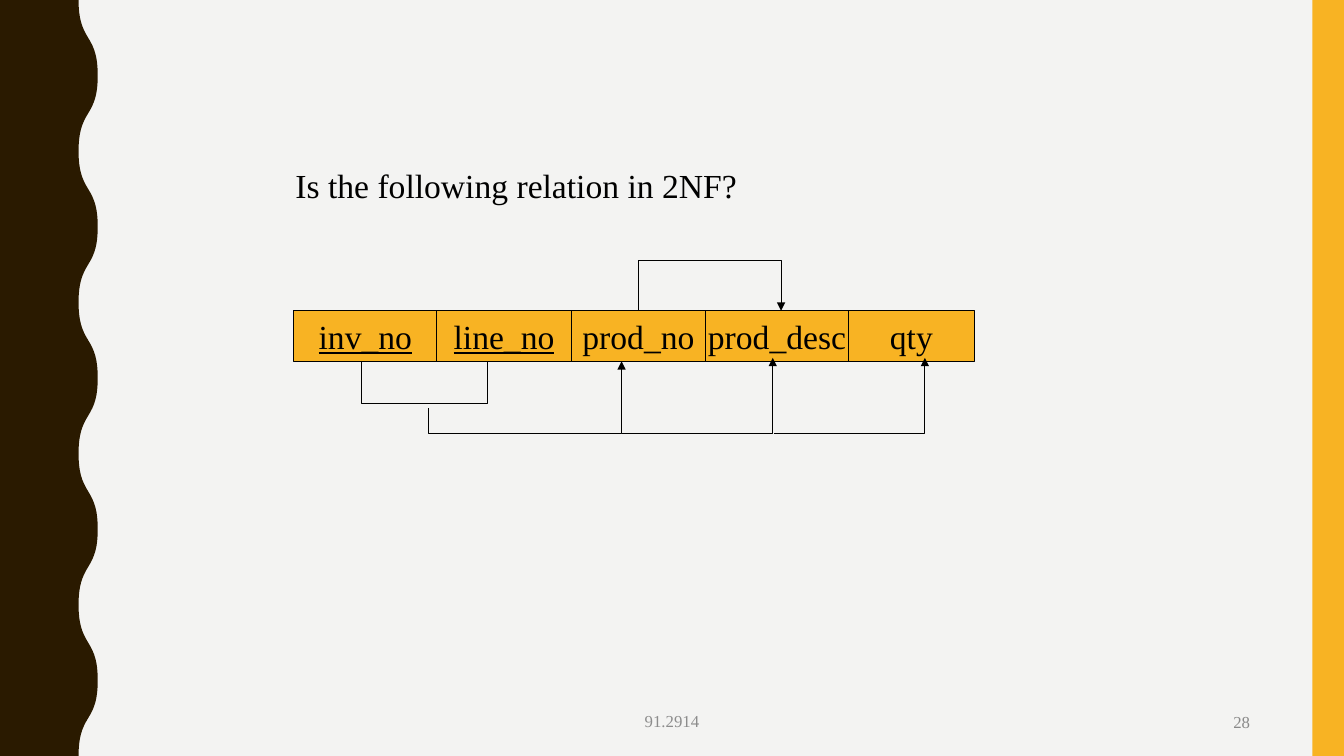
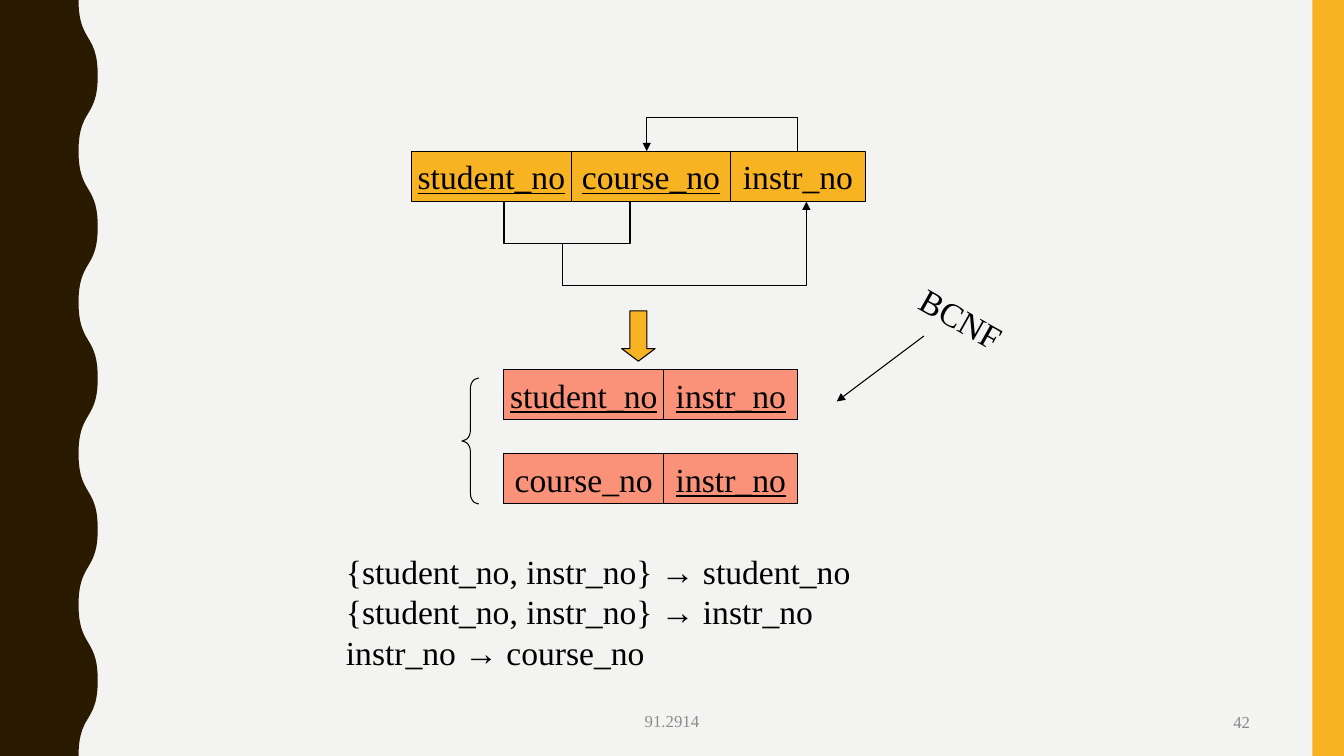
"""Two slides on normal forms: a 2NF question and a BCNF decomposition."""
from lxml.etree import SubElement
from pptx import Presentation
from pptx.dml.color import RGBColor
from pptx.enum.shapes import MSO_CONNECTOR, MSO_SHAPE as Preset
from pptx.enum.text import MSO_ANCHOR as Anchor, MSO_AUTO_SIZE as AutoSize, PP_ALIGN as Align
from pptx.oxml.ns import qn
from pptx.util import Inches, Pt

FONT = "Times New Roman"
PAPER, BROWN, AMBER, RED, BLACK = "F3F3F2", "2A1A00", "F8B323", "FF3300", "000000"
UNIT = Inches(1) // 12
COLUMNS, ROWS = 160, 90
CELL_ROWS = 6


def paint(shape, fill=None, line=BLACK, opacity=100, arrow=False):
    """Set fill, outline and arrowhead, and remove the shadow."""
    properties = shape._element.spPr
    if fill:
        shape.fill.solid()
        shape.fill.fore_color.rgb = RGBColor.from_string(fill)
        if opacity < 100:
            color = properties.find(qn("a:solidFill"))[0]
            SubElement(color, qn("a:alpha"), val=str(opacity * 1000))
    elif hasattr(shape, "fill"):
        shape.fill.background()
    if line:
        shape.line.color.rgb = RGBColor.from_string(line)
        shape.line.width = Pt(0.75)
    else:
        shape.line.fill.background()
    if arrow:
        SubElement(properties.find(qn("a:ln")), qn("a:tailEnd"), type="triangle")
    SubElement(properties, qn("a:effectLst"))


def write(shape, text, size=24, color=BLACK, align=Align.LEFT, anchor=Anchor.TOP, wrap=False, underline=None):
    """Fill a shape with text in the shared font."""
    frame = shape.text_frame
    frame.text = text
    frame.word_wrap = wrap
    frame.vertical_anchor = anchor
    for paragraph in frame.paragraphs:
        paragraph.alignment = align
        for run in paragraph.runs:
            run.font.name = FONT
            run.font.size = Pt(size)
            run.font.underline = underline
            run.font.color.rgb = RGBColor.from_string(color)


presentation = Presentation()
presentation.slide_width = COLUMNS * UNIT
presentation.slide_height = ROWS * UNIT
background = presentation.slide_master.background.fill
background.solid()
background.fore_color.rgb = RGBColor.from_string(PAPER)

WAVE_LENGTH = 1.5
STEPS = 8
controls = [(0.78, 0), (0.78, 0.18), (0.81, 0.27), (0.875, 0.375)]
quarter = []
for step in range(STEPS + 1):
    t = step / STEPS
    weights = [(1 - t) ** 3, 3 * t * (1 - t) ** 2, 3 * t ** 2 * (1 - t), t ** 3]
    quarter.append([sum(w * point[axis] for w, point in zip(weights, controls)) for axis in (0, 1)])
middle_x, middle_y = controls[-1]
rising = quarter + [(2 * middle_x - x, 2 * middle_y - y) for x, y in reversed(quarter[:-1])]
wave = rising + [(x, WAVE_LENGTH - y) for x, y in reversed(rising[:-1])]
edge = [(Inches(x), Inches(y + crest * WAVE_LENGTH)) for crest in range(5) for x, y in wave]

footers = [
    ("91.2914", 61, 83.4, 38, 4.8, "8C8C8C", Align.CENTER),
    (None, 113, 83.6, 37, 4.6, "898989", Align.RIGHT),
]
slides = []
for number in ("28", "42"):
    slide = presentation.slides.add_slide(presentation.slide_layouts[6])
    slides.append(slide)
    builder = slide.shapes.build_freeform(0, 0)
    builder.add_line_segments(edge + [(0, ROWS * UNIT)], close=True)
    paint(builder.convert_to_shape(), BROWN, None)
    band = slide.shapes.add_shape(
        Preset.RECTANGLE, int(156.25 * UNIT), 0, int(3.75 * UNIT), ROWS * UNIT)
    paint(band, AMBER, None)
    for text, left, top, width, height, color, align in footers:
        footer = slide.shapes.add_textbox(*[int(n * UNIT) for n in (left, top, width, height)])
        write(footer, text or number, 12, color, align, Anchor.MIDDLE, wrap=True)
question, decomposition = slides

relations = [
    (question, 35, 37, AMBER, 100, [("inv_no", 17, True), ("line_no", 16, True), ("prod_no", 16, False),
                                    ("prod_desc", 17, False), ("qty", 15, False)]),
    (decomposition, 60, 54, RED, 50, [("course_no", 19, False), ("instr_no", 16, True)]),
    (decomposition, 60, 44, RED, 50, [("student_no", 19, True), ("instr_no", 16, True)]),
    (decomposition, 49, 18, AMBER, 100, [("student_no", 19, True), ("course_no", 19, True),
                                         ("instr_no", 16, False)]),
]
for slide, left, top, fill, opacity, attributes in relations:
    for name, width, is_key in attributes:
        cell = slide.shapes.add_shape(
            Preset.RECTANGLE, left * UNIT, top * UNIT, width * UNIT, CELL_ROWS * UNIT)
        paint(cell, fill, opacity=opacity)
        write(cell, name, align=Align.CENTER, anchor=Anchor.MIDDLE, underline=is_key)
        left += width

dependencies = [
    (question, False, [(43, 43), (43, 48), (58, 48), (58, 43)]),
    (question, True, [(51, 48.6), (51, 51.6), (74, 51.6), (74, 43)]),
    (question, True, [(74, 51.6), (92, 51.6), (92, 42.6)]),
    (question, True, [(92.2, 51.6), (110.1, 51.6), (110.1, 42.6)]),
    (question, True, [(76, 37), (76, 31), (93, 31), (93, 37)]),
    (decomposition, False, [(60, 24), (60, 29), (75, 29), (75, 24)]),
    (decomposition, True, [(67, 29), (67, 34), (96, 34), (96, 24)]),
    (decomposition, True, [(95, 18), (95, 14), (77, 14), (77, 18)]),
]
for slide, arrow, corners in dependencies:
    points = [(int(x * UNIT), int(y * UNIT)) for x, y in corners]
    builder = slide.shapes.build_freeform(*points[0])
    builder.add_line_segments(points[1:], close=False)
    paint(builder.convert_to_shape(), arrow=arrow)

symbols = [
    (Preset.DOWN_ARROW, 74, 37, 4, 6, AMBER, (0.5, 0.375)),
    (Preset.LEFT_BRACE, 55, 45, 2, 15, None, (0.625, 0.5)),
]
for preset, left, top, width, height, fill, adjustments in symbols:
    symbol = decomposition.shapes.add_shape(preset, left * UNIT, top * UNIT, width * UNIT, height * UNIT)
    for index, value in enumerate(adjustments):
        symbol.adjustments[index] = value
    paint(symbol, fill)

pointer = decomposition.shapes.add_connector(
    MSO_CONNECTOR.STRAIGHT, 110 * UNIT, 40 * UNIT, int(99.6 * UNIT), int(47.8 * UNIT))
paint(pointer, arrow=True)

rules = [
    "{student_no, instr_no} → student_no",
    "{student_no, instr_no} → instr_no",
    "instr_no → course_no",
]
labels = [
    (question, "Is the following relation in 2NF?", 34, 19, 55, 6, 0),
    (decomposition, "BCNF", 107.9, 35.5, 15, 6, 29.4),
    (decomposition, "\n".join(rules), 40, 65, 63, 15.7, 0),
]
for slide, text, left, top, width, height, rotation in labels:
    label = slide.shapes.add_textbox(*[int(n * UNIT) for n in (left, top, width, height)])
    label.rotation = rotation
    write(label, text)
    if not rotation:
        label.text_frame.auto_size = AutoSize.SHAPE_TO_FIT_TEXT

presentation.save("out.pptx")
